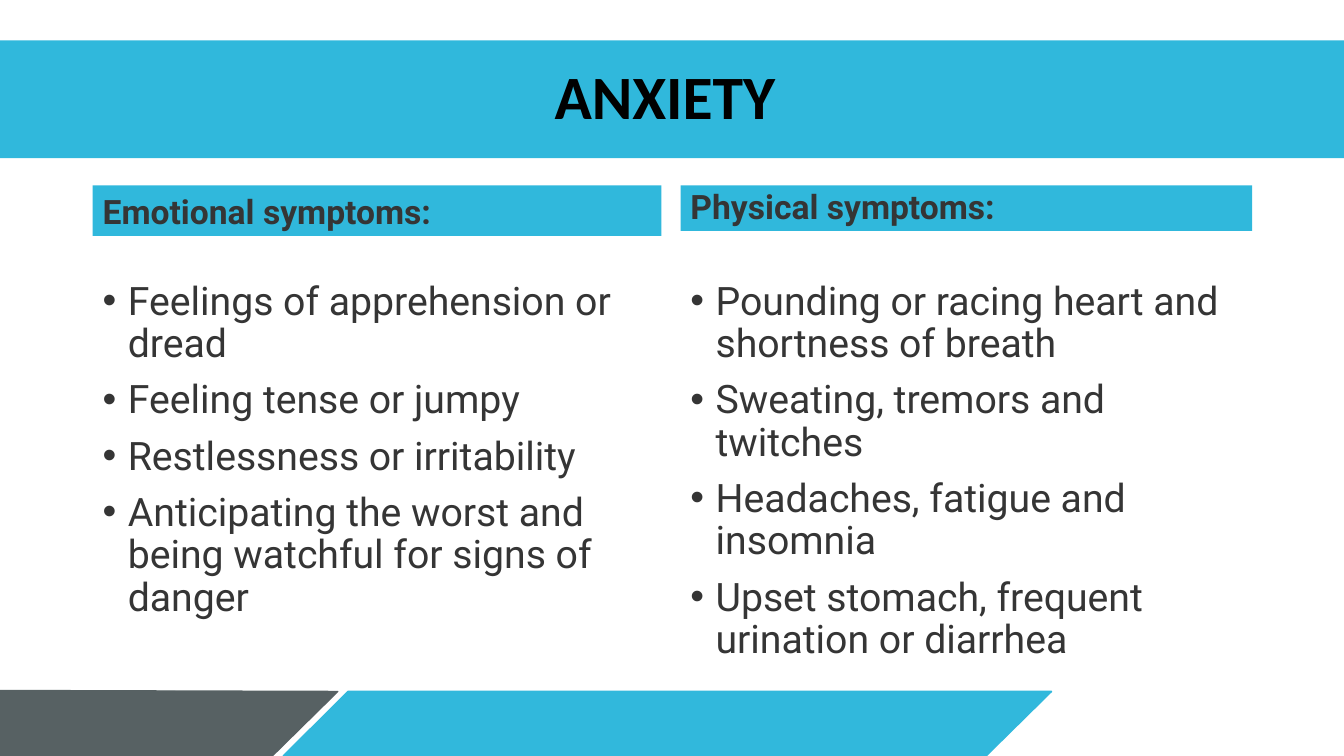
from lxml.etree import SubElement
from pptx import Presentation
from pptx.dml.color import RGBColor
from pptx.enum.text import MSO_ANCHOR, MSO_AUTO_SIZE, PP_ALIGN
from pptx.oxml.ns import qn
from pptx.util import Inches, Pt

BLUE, GRAY, INK = "30B8DC", "576163", "353535"


def paint(target, color):
    """Give a shape a solid fill, or a line or font its colour."""
    target.fill.solid()
    target.fill.fore_color.rgb = RGBColor.from_string(color)


def style(para, font_name, size, color, bold, spacing):
    para.line_spacing = spacing
    para.font.name = font_name
    para.font.size = Pt(size)
    para.font.bold = bold
    paint(para.font, color)


deck = Presentation()
deck.slide_width, deck.slide_height = Inches(13.33), Inches(7.5)
page = deck.slides.add_slide(deck.slide_layouts[5])

# Footer bands
bands = [
    ("31B8DC", [(2.81, 7.5), (3.45, 6.86), (10.43, 6.86), (9.75, 7.53)]),
    (GRAY, [(-0.04, 7.52), (-0.03, 6.85), (3.35, 6.86), (2.67, 7.53)]),
]
for color, corners in bands:
    points = [(Inches(x), Inches(y)) for x, y in corners]
    builder = page.shapes.build_freeform(*points[0])
    builder.add_line_segments(points[1:], close=True)
    band = builder.convert_to_shape()
    band.shadow.inherit = False
    paint(band, color)
    paint(band.line, color)
    band.line.width = Pt(1)

# Title
title = page.shapes.title
title.left, title.top = Inches(0), Inches(0.4)
title.width, title.height = Inches(13.33), Inches(1.17)
paint(title, BLUE)
title.text_frame.text = "ANXIETY "
title.text_frame.auto_size = MSO_AUTO_SIZE.NONE
title.text_frame.vertical_anchor = MSO_ANCHOR.MIDDLE
title.text_frame.paragraphs[0].alignment = PP_ALIGN.CENTER
style(title.text_frame.paragraphs[0], "Calibri", 44, "000000", True, 0.9)

# Symptom columns: left, width, heading height, heading, symptoms
columns = [
    (0.92, 5.64, 0.5, "Emotional symptoms:", [
        "Feelings of apprehension or dread",
        "Feeling tense or jumpy",
        "Restlessness or irritability",
        "Anticipating the worst and being watchful for signs of danger",
    ]),
    (6.75, 5.67, 0.45, "Physical symptoms:", [
        "Pounding or racing heart and shortness of breath",
        "Sweating, tremors and twitches",
        "Headaches, fatigue and insomnia",
        "Upset stomach, frequent urination or diarrhea",
    ]),
]
for left, width, heading_height, heading, symptoms in columns:
    box = page.shapes.add_textbox(
        Inches(left), Inches(1.84), Inches(width), Inches(heading_height))
    paint(box, BLUE)
    box.text_frame.word_wrap = True
    box.text_frame.vertical_anchor = MSO_ANCHOR.BOTTOM
    box.text_frame.text = heading
    style(box.text_frame.paragraphs[0], "Roboto", 24, INK, True, 0.8)

    box = page.shapes.add_textbox(
        Inches(left), Inches(2.74), Inches(width), Inches(4.03))
    frame = box.text_frame
    frame.word_wrap = True
    frame.text = "\n".join(symptoms)
    for index, para in enumerate(frame.paragraphs):
        properties = para._p.get_or_add_pPr()
        properties.set("marL", str(Inches(0.25)))
        properties.set("indent", str(Inches(-0.25)))
        SubElement(properties, qn("a:buFont"), typeface="Arial")
        SubElement(properties, qn("a:buChar"), char="•")
        para.space_before = Pt(10 if index else 0)
        style(para, "Roboto", 28, INK, False, 0.9)

deck.save("out.pptx")
